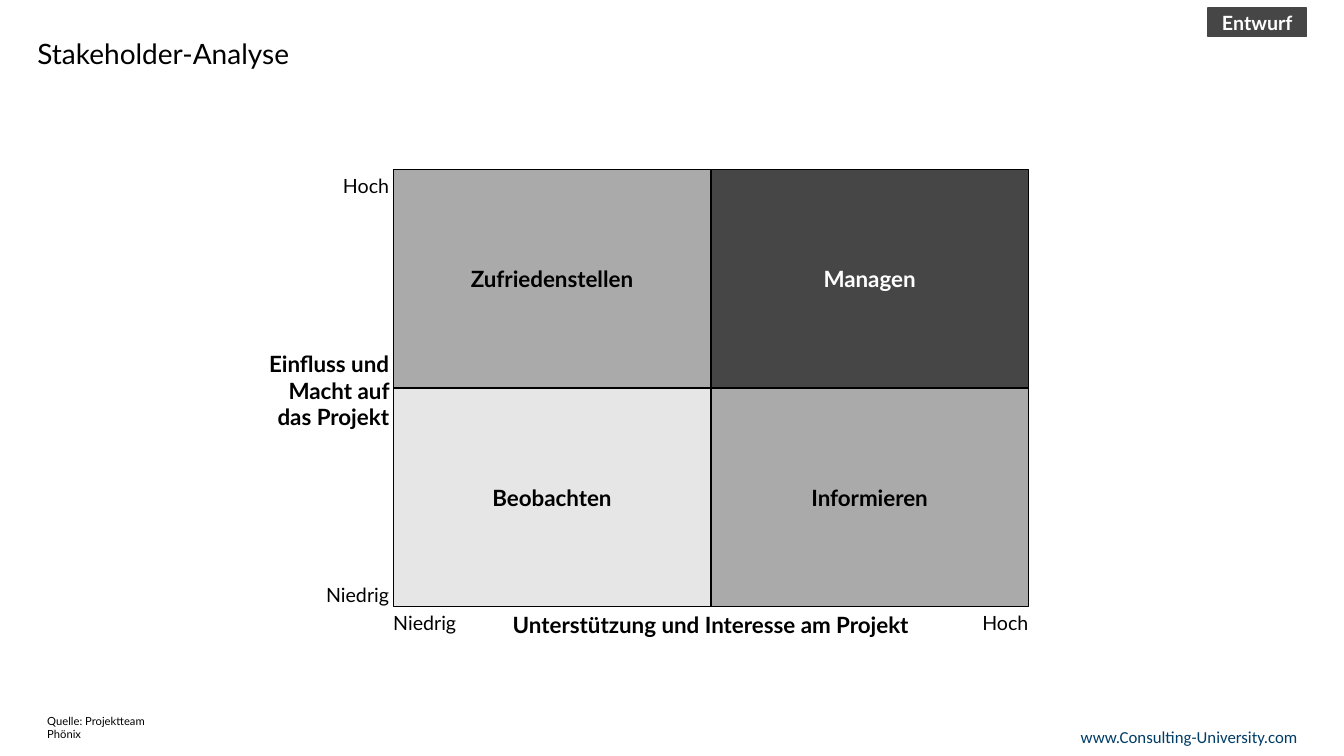
from pptx import Presentation
from pptx.dml.color import RGBColor
from pptx.enum import shapes, text
from pptx.util import Inches, Pt

COLORS = {"black": "000000", "white": "FFFFFF", "dark": "464646",
          "mid": "AAAAAA", "light": "E6E6E6", "link": "003D66"}
LEFT, CENTER, RIGHT = text.PP_ALIGN.LEFT, text.PP_ALIGN.CENTER, text.PP_ALIGN.RIGHT
TOP, MIDDLE, BOTTOM = text.MSO_ANCHOR.TOP, text.MSO_ANCHOR.MIDDLE, text.MSO_ANCHOR.BOTTOM

# Content: matrix rows from top to bottom, as (label, fill, font colour)
QUADRANTS = [
    [("Zufriedenstellen", "mid", "black"), ("Managen", "dark", "white")],
    [("Beobachten", "light", "black"), ("Informieren", "mid", "black")],
]
LOW, HIGH = "Niedrig", "Hoch"
POWER_AXIS = "Einfluss und Macht auf das Projekt"
INTEREST_AXIS = "Unterstützung und Interesse am Projekt"

# Matrix geometry in inches
MATRIX_LEFT, MATRIX_TOP = 3.9, 1.68
CELL_W, CELL_H = 3.15, 2.17
MATRIX_RIGHT = MATRIX_LEFT + 2 * CELL_W
MATRIX_BOTTOM = MATRIX_TOP + 2 * CELL_H
LABEL_H, LABEL_W = 0.28, 0.63
AXIS_RIGHT = MATRIX_LEFT - 0.04
POWER_W, POWER_H = 1.28, 0.85
END_W = 3.11

STANDARD_INSETS = (0.1, 0.05, 0.1, 0.05)
LABEL_INSETS = (0, 0.04, 0, 0)


def rgb(name):
    return RGBColor.from_string(COLORS[name])


def write(box, words, size, color="black", bold=False, align=LEFT,
          anchor=TOP, insets=STANDARD_INSETS, font="Lato"):
    frame = box.text_frame
    frame.word_wrap = True
    frame.vertical_anchor = anchor
    (frame.margin_left, frame.margin_top,
     frame.margin_right, frame.margin_bottom) = map(Inches, insets)
    para = frame.paragraphs[0]
    para.alignment = align
    span = para.add_run()
    span.text = words
    span.font.name = font
    span.font.size = Pt(size)
    span.font.bold = bold
    span.font.color.rgb = rgb(color)
    return para


def add_text(page, place, words, size, **style):
    box = page.shapes.add_textbox(*map(Inches, place))
    return write(box, words, size, **style)


def add_block(page, place, words, size, fill, line, color):
    block = page.shapes.add_shape(shapes.MSO_SHAPE.RECTANGLE, *map(Inches, place))
    block.shadow.inherit = False
    block.fill.solid()
    block.fill.fore_color.rgb = rgb(fill)
    block.line.color.rgb = rgb(line)
    block.line.width = Pt(1)
    write(block, words, size, color=color, bold=True, align=CENTER, anchor=MIDDLE)


def main():
    deck = Presentation()
    deck.slide_width, deck.slide_height = Inches(13.33), Inches(7.5)
    page = deck.slides.add_slide(deck.slide_layouts[6])

    # Title, draft tag and footer
    title = add_text(page, (0.37, 0.35, 12.6, 0.59), "Stakeholder-Analyse", 20,
                     insets=(0, 0.05, 0, 0.05))
    title.line_spacing = 0.9
    add_block(page, (11.98, 0.08, 0.98, 0.28), "Entwurf", 14, "dark", "dark", "white")
    add_text(page, (0.37, 7.16, 1.5, 0.24), "Quelle: Projektteam Phönix", 8, anchor=BOTTOM)
    add_text(page, (9.57, 7.16, 3.4, 0.3), "www.Consulting-University.com", 12,
             color="link", align=RIGHT, anchor=MIDDLE, font="Calibri")

    # Quadrants
    for row, cells in enumerate(QUADRANTS):
        for col, (label, fill, color) in enumerate(cells):
            place = (MATRIX_LEFT + col * CELL_W, MATRIX_TOP + row * CELL_H, CELL_W, CELL_H)
            add_block(page, place, label, 16, fill, "black", color)

    # Vertical axis
    for words, top in [(HIGH, MATRIX_TOP), (LOW, MATRIX_BOTTOM - LABEL_H)]:
        add_text(page, (AXIS_RIGHT - LABEL_W, top, LABEL_W, LABEL_H), words, 14,
                 align=RIGHT, anchor=MIDDLE, insets=LABEL_INSETS)
    power_top = MATRIX_TOP + CELL_H - POWER_H / 2
    add_text(page, (AXIS_RIGHT - POWER_W, power_top, POWER_W, POWER_H), POWER_AXIS, 16,
             bold=True, align=RIGHT, anchor=MIDDLE, insets=LABEL_INSETS)

    # Horizontal axis
    for words, left, align in [(LOW, MATRIX_LEFT, LEFT), (HIGH, MATRIX_RIGHT - END_W, RIGHT)]:
        add_text(page, (left, MATRIX_BOTTOM, END_W, LABEL_H), words, 14,
                 align=align, insets=LABEL_INSETS)
    add_text(page, (MATRIX_LEFT, MATRIX_BOTTOM, 2 * CELL_W, 0.31), INTEREST_AXIS, 16,
             bold=True, align=CENTER, insets=LABEL_INSETS)

    deck.save("out.pptx")


if __name__ == "__main__":
    main()
